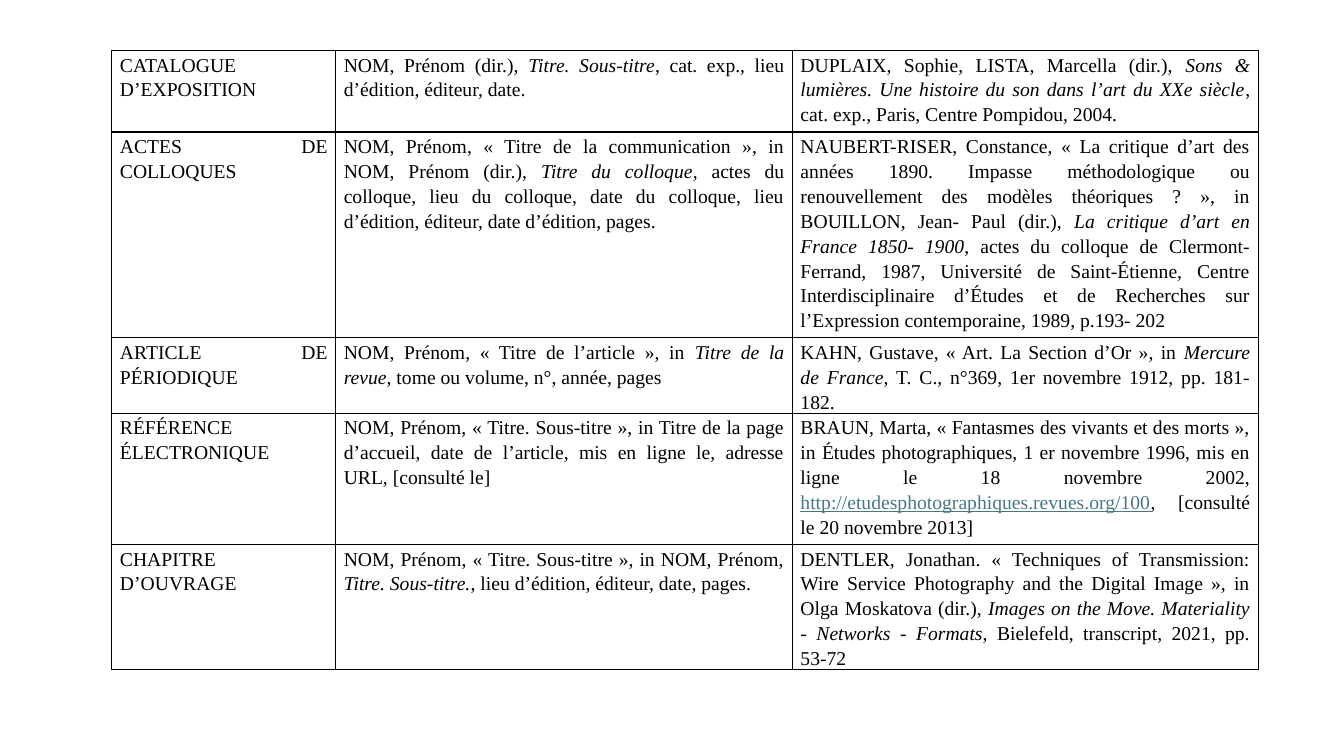
"""Builds a slide with a table of bibliographic reference formats."""
from lxml import etree
from pptx import Presentation
from pptx import util as u
from pptx.dml.color import RGBColor
from pptx.enum import text
from pptx.oxml.ns import qn

COLORS = {"ink": "000000", "link": "467886"}
COL_WIDTHS = [2.22, 4.53, 4.62]
ROW_HEIGHTS = [0.81, 2.04, 0.56, 1.3, 1.05]
REFERENCES = [
    ("CATALOGUE D’EXPOSITION",
     "NOM, Prénom (dir.), *Titre. Sous-titre*, cat. exp., lieu d’édition, éditeur, date.",
     "DUPLAIX, Sophie, LISTA, Marcella (dir.), *Sons & lumières. Une histoire du son dans "
     "l’art du XXe siècle*, cat. exp., Paris, Centre Pompidou, 2004."),
    ("ACTES DE COLLOQUES",
     "NOM, Prénom, « Titre de la communication », in NOM, Prénom (dir.), *Titre du colloque*, "
     "actes du colloque, lieu du colloque, date du colloque, lieu d’édition, éditeur, "
     "date d’édition, pages.",
     "NAUBERT-RISER, Constance, « La critique d’art des années 1890. Impasse méthodologique ou "
     "renouvellement des modèles théoriques ? », in BOUILLON, Jean- Paul (dir.), "
     "*La critique d’art en France 1850- 1900*, actes du colloque de Clermont-Ferrand, 1987, "
     "Université de Saint-Étienne, Centre Interdisciplinaire d’Études et de Recherches sur "
     "l’Expression contemporaine, 1989, p.193- 202"),
    ("ARTICLE DE PÉRIODIQUE",
     "NOM, Prénom, « Titre de l’article », in *Titre de la revue*, tome ou volume, n°, "
     "année, pages",
     "KAHN, Gustave, « Art. La Section d’Or », in *Mercure de France*, T. C., n°369, "
     "1er novembre 1912, pp. 181-182."),
    ("RÉFÉRENCE ÉLECTRONIQUE",
     "NOM, Prénom, « Titre. Sous-titre », in Titre de la page d’accueil, date de l’article, "
     "mis en ligne le, adresse URL, [consulté le]",
     "BRAUN, Marta, « Fantasmes des vivants et des morts », in Études photographiques, "
     "1 er novembre 1996, mis en ligne le 18 novembre 2002, "
     "*http://etudesphotographiques.revues.org/100*, [consulté le 20 novembre 2013]"),
    ("CHAPITRE D’OUVRAGE",
     "NOM, Prénom, « Titre. Sous-titre », in NOM, Prénom, *Titre. Sous-titre.*, "
     "lieu d’édition, éditeur, date, pages.",
     "DENTLER, Jonathan. « Techniques of Transmission: Wire Service Photography and the "
     "Digital Image », in Olga Moskatova (dir.), *Images on the Move. Materiality - Networks* "
     "- *Formats*, Bielefeld, transcript, 2021, pp. 53‑72"),
]


def add_run(p, content, font="Times New Roman", size=14, color="ink",
            italic=False, underline=False):
    """Add a formatted run to a paragraph."""
    r = p.add_run()
    r.text = content
    r.font.name, r.font.size = font, u.Pt(size)
    r.font.italic, r.font.underline = italic, underline
    r.font.color.rgb = RGBColor.from_string(COLORS[color])


class SlideBuilder:
    """Hold the table style and the current slide."""

    def __init__(self, prs):
        """Add a blank slide."""
        self.s = prs.slides.add_slide(prs.slide_layouts[6])
        self.border_width = u.Pt(1)
        self.side_margin = u.Inches(0.08)

    def table(self, left, top, widths, heights, rows):
        """Add a bordered table filled with marked-up text."""
        frame = self.s.shapes.add_table(
            len(heights), len(widths), u.Inches(left), u.Inches(top),
            u.Inches(sum(widths)), u.Inches(sum(heights)))
        table = frame.table
        table.first_row = table.horz_banding = False
        for column, width in zip(table.columns, widths):
            column.width = u.Inches(width)
        for row, height, contents in zip(table.rows, heights, rows):
            row.height = u.Inches(height)
            for cell, content in zip(row.cells, contents):
                self.borders(cell)
                self.cell(cell, content)

    def borders(self, cell):
        """Draw a line on each side of a cell."""
        tc_pr = cell._tc.get_or_add_tcPr()
        for side in ("a:lnL", "a:lnR", "a:lnT", "a:lnB"):
            line = etree.SubElement(tc_pr, qn(side), w=str(self.border_width))
            fill = etree.SubElement(line, qn("a:solidFill"))
            etree.SubElement(fill, qn("a:srgbClr"), val=COLORS["ink"])

    def cell(self, cell, content):
        """Write justified text, with asterisks around italics and links."""
        cell.fill.background()
        cell.margin_left = cell.margin_right = self.side_margin
        cell.margin_top, cell.margin_bottom = u.Inches(0.01), 0
        p = cell.text_frame.paragraphs[0]
        p.alignment = text.PP_ALIGN.JUSTIFY
        p.line_spacing, p.space_after = 1.15, u.Pt(4)
        for i, part in enumerate(content.split("*")):
            if part.startswith("http"):
                add_run(p, part, color="link", underline=True)
            elif part:
                add_run(p, part, italic=i % 2 == 1)


def main():
    """Build and save the presentation."""
    prs = Presentation()
    prs.slide_width, prs.slide_height = u.Inches(13.33), u.Inches(7.5)
    SlideBuilder(prs).table(1.11, 0.5, COL_WIDTHS, ROW_HEIGHTS, REFERENCES)
    prs.save("out.pptx")


if __name__ == "__main__":
    main()
